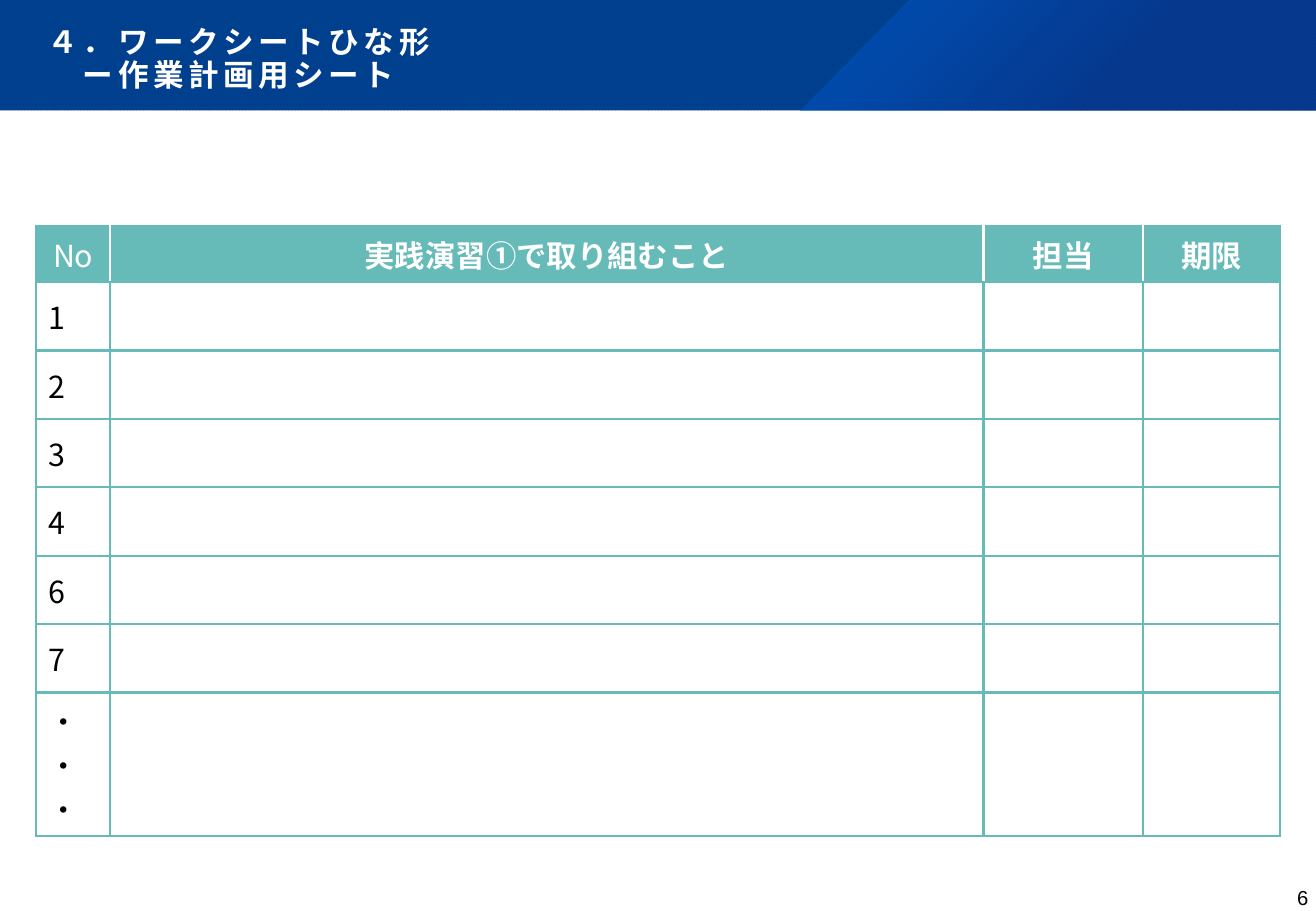
from lxml.etree import SubElement
from pptx import Presentation
from pptx.dml.color import RGBColor
from pptx.enum.dml import MSO_PATTERN
from pptx.enum.shapes import MSO_SHAPE
from pptx.enum.text import MSO_ANCHOR, MSO_AUTO_SIZE, PP_ALIGN
from pptx.oxml import parse_xml
from pptx.oxml.ns import nsdecls, qn
from pptx.util import Cm, Pt

PAGE_WIDTH, PAGE_HEIGHT, BAND_HEIGHT = 27.51, 19.05, 2.31
TEAL, WHITE, BLACK = "66BAB7", "FFFFFF", "000000"
SHEET_FONT = "Noto Sans CJK JP"
COLUMN_WIDTHS = [1.54, 18.26, 3.33, 2.87]
HEADINGS = ["No", "実践演習①で取り組むこと", "担当", "期限"]
ROW_LABELS = ["1", "2", "3", "4", "6", "7", "・・・"]
HEADING_HEIGHT, ROW_HEIGHT, LAST_ROW_HEIGHT = 1.18, 1.43, 3.01


def color(value):
    return RGBColor.from_string(value)


def set_all(target, values):
    for name, value in values.items():
        setattr(target, name, value)


class Page:
    def __init__(self, deck):
        self.slide = deck.slides.add_slide(deck.slide_layouts[5])
        self.shapes = self.slide.shapes

    def style_text(self, para, font, size, text_color, align=PP_ALIGN.LEFT, bold=False):
        para.alignment = align
        for span in para.runs:
            set_all(span.font, {"name": font, "size": Pt(size), "bold": bold})
            span.font.color.rgb = color(text_color)
            SubElement(span.font._element, qn("a:ea"), typeface=font)

    def band(self, foreground, background):
        band = self.shapes.add_shape(
            MSO_SHAPE.RECTANGLE, 0, 0, Cm(PAGE_WIDTH), Cm(BAND_HEIGHT))
        band.shadow.inherit = False
        band.line.fill.background()
        band.fill.patterned()
        band.fill.pattern = MSO_PATTERN.DARK_UPWARD_DIAGONAL
        band.fill.fore_color.rgb = color(foreground)
        band.fill.back_color.rgb = color(background)

    def glow(self, points, stops):
        """Outline with a translucent gradient spreading from its top left corner."""
        corners = [(Cm(x), Cm(y)) for x, y in points]
        builder = self.shapes.build_freeform(*corners[0])
        builder.add_line_segments(corners[1:], close=True)
        glow = builder.convert_to_shape()
        glow.shadow.inherit = False
        glow.line.fill.background()
        stop_xml = "".join(
            f'<a:gs pos="{place * 1000}"><a:srgbClr val="{value}">'
            f'<a:alpha val="{alpha * 1000}"/></a:srgbClr></a:gs>'
            for place, value, alpha in stops)
        gradient = parse_xml(
            f'<a:gradFill {nsdecls("a")} rotWithShape="1"><a:gsLst>{stop_xml}</a:gsLst>'
            '<a:path path="circle"><a:fillToRect r="100000" b="100000"/></a:path></a:gradFill>')
        glow._element.spPr.find(qn("a:custGeom")).addnext(gradient)

    def title(self, text):
        title = self.shapes.title
        set_all(title, {"left": 0, "top": 0,
                        "width": Cm(PAGE_WIDTH), "height": Cm(BAND_HEIGHT)})
        frame = title.text_frame
        frame.text = text
        set_all(frame, {"margin_left": Cm(1), "margin_top": Cm(0.91),
                        "margin_right": Cm(0.91), "margin_bottom": Cm(0.36),
                        "vertical_anchor": MSO_ANCHOR.BOTTOM,
                        "auto_size": MSO_AUTO_SIZE.NONE, "word_wrap": True})
        para = frame.paragraphs[0]
        para.line_spacing = 0.9
        self.style_text(para, "Lato", 18.1, WHITE, bold=True)
        for span in para.runs:
            span.font._element.set("spc", "270")
        self.shapes._spTree.append(title._element)  # in front of the band

    def page_number(self, text):
        box = self.shapes.add_textbox(Cm(25.6), Cm(18.52), Cm(1.75), Cm(0.38))
        frame = box.text_frame
        margins = ("margin_left", "margin_top", "margin_right", "margin_bottom")
        set_all(frame, {**dict.fromkeys(margins, 0), "word_wrap": True})
        frame.text = text
        self.style_text(frame.paragraphs[0], "Arial", 12, BLACK, PP_ALIGN.RIGHT)

    def cell(self, cell, text, fill, borders, **text_format):
        cell.vertical_anchor = MSO_ANCHOR.MIDDLE
        cell.fill.solid()
        cell.fill.fore_color.rgb = color(fill)
        cell.text = text
        self.style_text(cell.text_frame.paragraphs[0], SHEET_FONT, 18, **text_format)
        for index, (side, value) in enumerate(borders.items()):
            cell._tc.tcPr.insert(index, parse_xml(
                f'<a:ln{side} {nsdecls("a")} w="{Pt(1.5)}"><a:solidFill>'
                f'<a:srgbClr val="{value}"/></a:solidFill></a:ln{side}>'))

    def worksheet(self, left, top):
        last = len(HEADINGS) - 1
        heights = [HEADING_HEIGHT, *[ROW_HEIGHT] * (len(ROW_LABELS) - 1), LAST_ROW_HEIGHT]
        table = self.shapes.add_table(
            len(heights), len(HEADINGS), Cm(left), Cm(top),
            Cm(sum(COLUMN_WIDTHS)), Cm(sum(heights))).table
        set_all(table, {"first_row": False, "horz_banding": False})
        for column, width in zip(table.columns, COLUMN_WIDTHS):
            column.width = Cm(width)
        for row, height in zip(table.rows, heights):
            row.height = Cm(height)
        teal_borders = dict.fromkeys("LRTB", TEAL)
        for index, heading in enumerate(HEADINGS):
            borders = {**teal_borders, "L": WHITE if index else TEAL,
                       "R": WHITE if index < last else TEAL}
            self.cell(table.cell(0, index), heading, TEAL, borders,
                      text_color=WHITE, align=PP_ALIGN.CENTER, bold=index > 0)
        for row_index, label in enumerate(ROW_LABELS, 1):
            for index in range(len(HEADINGS)):
                self.cell(table.cell(row_index, index), "" if index else label,
                          WHITE, teal_borders, text_color=BLACK)


def main():
    deck = Presentation()
    set_all(deck, {"slide_width": Cm(PAGE_WIDTH), "slide_height": Cm(PAGE_HEIGHT)})
    page = Page(deck)
    page.band("003579", "004292")
    page.glow([(19.02, 0), (PAGE_WIDTH, 0), (PAGE_WIDTH, BAND_HEIGHT), (16.71, BAND_HEIGHT)],
              [(0, "0064DF", 50), (62, "0C338E", 55)])
    page.title("４．ワークシートひな形\v　ー作業計画用シート")
    page.page_number("6")
    page.worksheet(0.76, 4.72)
    deck.save("out.pptx")


if __name__ == "__main__":
    main()
